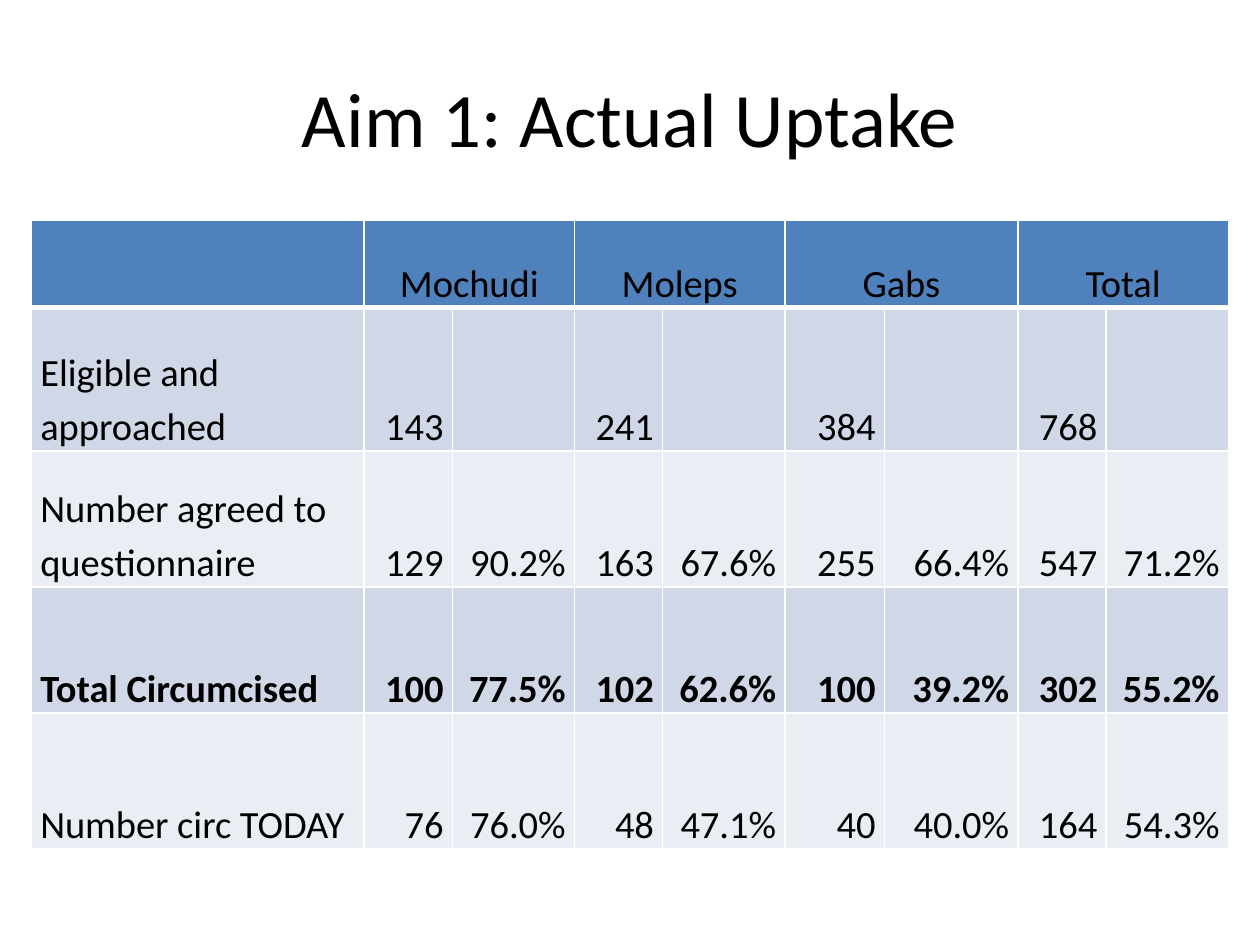
from dataclasses import dataclass

from lxml.etree import SubElement
from pptx import Presentation
from pptx.dml.color import RGBColor
from pptx.enum.text import MSO_ANCHOR, PP_ALIGN
from pptx.oxml.ns import qn
from pptx.util import Inches, Pt


@dataclass(frozen=True)
class Theme:
    font: str = "Calibri"
    title_size: int = 44
    body_size: int = 22
    text: str = "000000"
    header: str = "4F81BD"
    bands: tuple = ("D0D8E8", "E9EDF4")
    border: str = "FFFFFF"


theme = Theme()


def add_text(p, text, size, bold=False):
    r = p.add_run()
    r.text = text
    r.font.name = theme.font
    r.font.size = Pt(size)
    r.font.bold = bold
    r.font.color.rgb = RGBColor.from_string(theme.text)


def style_cell(cell, fill, bottom_width=1):
    """Set margins, borders and fill; borders must precede the fill in the XML."""
    cell.vertical_anchor = MSO_ANCHOR.BOTTOM
    cell.margin_left = cell.margin_right = Inches(0.07)
    cell.margin_top = cell.margin_bottom = 0
    tc_pr = cell._tc.get_or_add_tcPr()
    for side in "LRTB":
        width = bottom_width if side == "B" else 1
        ln = SubElement(tc_pr, qn(f"a:ln{side}"), w=str(Pt(width)))
        solid = SubElement(ln, qn("a:solidFill"))
        SubElement(solid, qn("a:srgbClr"), val=theme.border)
    cell.fill.solid()
    cell.fill.fore_color.rgb = RGBColor.from_string(fill)


sites = ["Mochudi", "Moleps", "Gabs", "Total"]
rows = [
    ["Eligible and approached", "143", "", "241", "", "384", "", "768", ""],
    ["Number agreed to questionnaire",
     "129", "90.2%", "163", "67.6%", "255", "66.4%", "547", "71.2%"],
    ["Total Circumcised",
     "100", "77.5%", "102", "62.6%", "100", "39.2%", "302", "55.2%"],
    ["Number circ TODAY",
     "76", "76.0%", "48", "47.1%", "40", "40.0%", "164", "54.3%"],
]
bold_row = "Total Circumcised"
col_widths = [2.64, 0.7, 0.97, 0.7, 0.97, 0.79, 1.06, 0.7, 0.97]
row_heights = [0.69, 1.14, 1.08, 1, 1.08]

prs = Presentation()
prs.slide_width = Inches(10)
prs.slide_height = Inches(7.5)
s = prs.slides.add_slide(prs.slide_layouts[5])

title = s.shapes.title
title.left, title.top = Inches(0.5), Inches(0.3)
title.width, title.height = Inches(9), Inches(1.25)
tf = title.text_frame
tf.vertical_anchor = MSO_ANCHOR.MIDDLE
p = tf.paragraphs[0]
p.alignment = PP_ALIGN.CENTER
add_text(p, "Aim 1: Actual Uptake", theme.title_size)

table = s.shapes.add_table(
    len(row_heights), len(col_widths),
    Inches(0.25), Inches(1.75), Inches(9.5), Inches(5),
).table
for column, width in zip(table.columns, col_widths):
    column.width = Inches(width)
for row, height in zip(table.rows, row_heights):
    row.height = Inches(height)

for cell in table.rows[0].cells:
    style_cell(cell, theme.header, bottom_width=3)
for i, site in enumerate(sites):
    cell = table.cell(0, 1 + 2 * i)
    cell.merge(table.cell(0, 2 + 2 * i))
    p = cell.text_frame.paragraphs[0]
    p.alignment = PP_ALIGN.CENTER
    p.line_spacing = 1.15
    add_text(p, site, theme.body_size)

for i, values in enumerate(rows):
    for j, value in enumerate(values):
        cell = table.cell(i + 1, j)
        style_cell(cell, theme.bands[i % 2])
        if value:
            p = cell.text_frame.paragraphs[0]
            p.alignment = PP_ALIGN.RIGHT if j else PP_ALIGN.LEFT
            p.line_spacing = 1.15
            add_text(p, value, theme.body_size, values[0] == bold_row)

prs.save("out.pptx")
